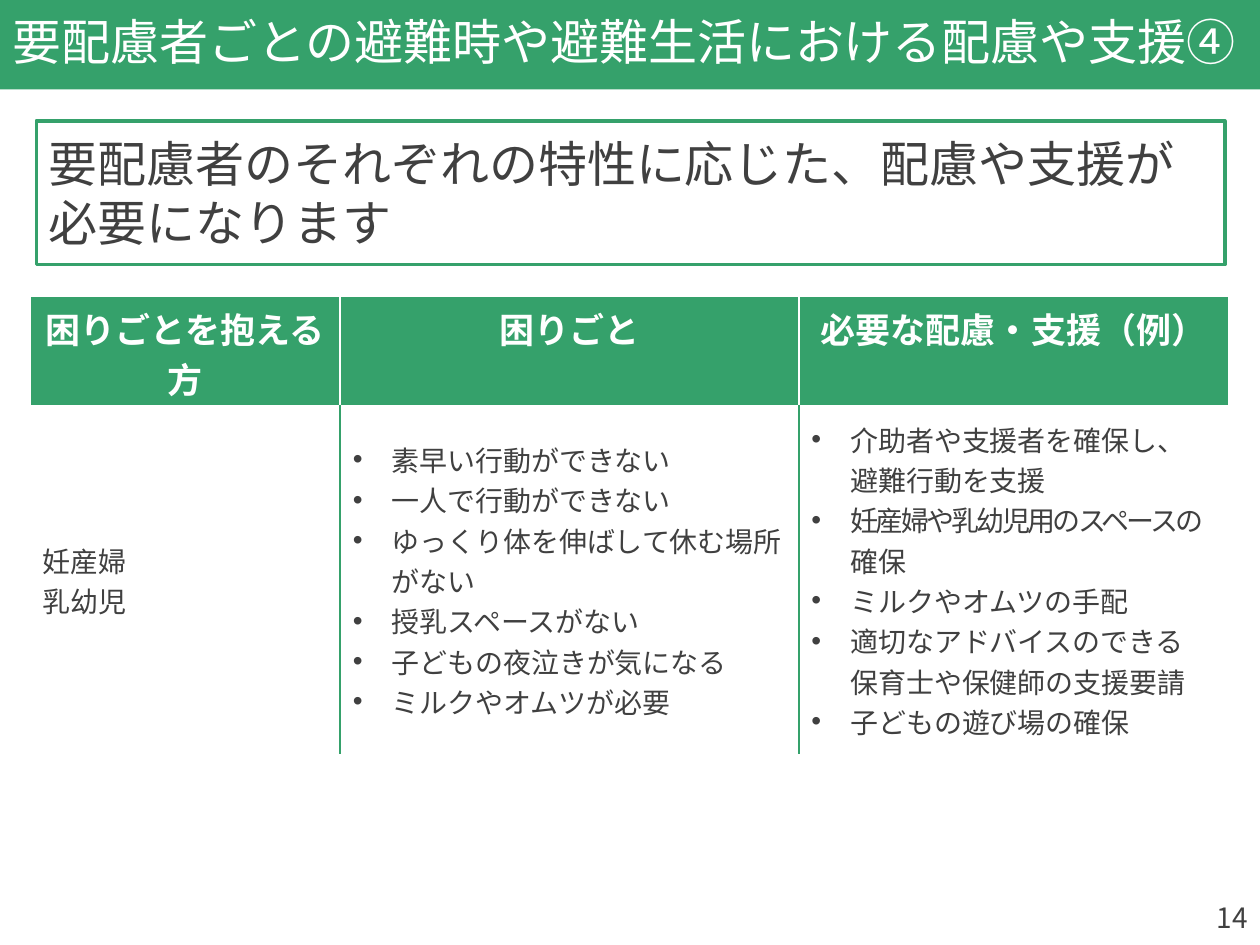
from dataclasses import dataclass

import lxml.etree
import pptx
import pptx.dml.color
import pptx.enum.shapes
import pptx.enum.text
import pptx.oxml.ns
import pptx.util
from pptx.util import Inches

qn = pptx.oxml.ns.qn
ALIGN = pptx.enum.text.PP_ALIGN
MIDDLE = pptx.enum.text.MSO_ANCHOR.MIDDLE


@dataclass(frozen=True)
class Theme:
    font: str = "Noto Sans CJK JP"
    green: str = "35A16B"
    text: str = "404040"
    white: str = "FFFFFF"
    headline_size: int = 28
    header_size: int = 20
    body_size: int = 16


@dataclass(frozen=True)
class Item:
    """One paragraph; tight_start is a leading part with condensed letters."""
    text: str
    tight_start: str = ""


@dataclass(frozen=True)
class Column:
    header: str
    width: float
    items: tuple[Item, ...]
    bulleted: bool = True


THEME = Theme()
COLUMNS = (
    Column("困りごとを抱える方", 2.46, (Item("妊産婦"), Item("乳幼児")), bulleted=False),
    Column("困りごと", 3.64, (
        Item("素早い行動ができない"),
        Item("一人で行動ができない"),
        Item("ゆっくり体を伸ばして休む場所がない"),
        Item("授乳スペースがない"),
        Item("子どもの夜泣きが気になる"),
        Item("ミルクやオムツが必要"),
    )),
    Column("必要な配慮・支援（例）", 3.41, (
        Item("介助者や支援者を確保し、\v避難行動を支援"),
        Item("確保", tight_start="妊産婦や乳幼児用のスペースの"),
        Item("ミルクやオムツの手配"),
        Item("適切なアドバイスのできる\v保育士や保健師の支援要請"),
        Item("子どもの遊び場の確保"),
    )),
)


def rgb(color: str) -> pptx.dml.color.RGBColor:
    return pptx.dml.color.RGBColor.from_string(color)


def format_runs(paragraph, size: int, color: str, bold: bool = False) -> None:
    """Format every run, naming the font for Japanese letters as well."""
    for run in paragraph.runs:
        run.font.size = pptx.util.Pt(size)
        run.font.bold = bold
        run.font.color.rgb = rgb(color)
        run.font.name = THEME.font
        latin = run.font._element.find(qn("a:latin"))
        east_asian = latin.makeelement(qn("a:ea"), {"typeface": THEME.font})
        latin.addnext(east_asian)


def fill_solid(part, color: str) -> None:
    part.fill.solid()
    part.fill.fore_color.rgb = rgb(color)


def add_bullet(paragraph) -> None:
    properties = paragraph._p.get_or_add_pPr()
    properties.set("marL", str(Inches(0.31)))
    properties.set("indent", str(-Inches(0.31)))
    lxml.etree.SubElement(properties, qn("a:buFont"), typeface="Arial")
    lxml.etree.SubElement(properties, qn("a:buChar"), char="•")


def set_borders(cell, left: str, right: str, bottom_width: int = 1) -> None:
    """Draw the cell borders; call before filling, as the fill comes after them."""
    properties = cell._tc.get_or_add_tcPr()
    borders = (("L", left, 1), ("R", right, 1),
               ("T", THEME.white, 1), ("B", THEME.white, bottom_width))
    for side, color, width in borders:
        line = lxml.etree.SubElement(properties, qn(f"a:ln{side}"),
                                     w=str(pptx.util.Pt(width)))
        solid = lxml.etree.SubElement(line, qn("a:solidFill"))
        lxml.etree.SubElement(solid, qn("a:srgbClr"), val=color)


def fill_header(cell, column: Column) -> None:
    set_borders(cell, THEME.white, THEME.white, bottom_width=3)
    fill_solid(cell, THEME.green)
    cell.text_frame.text = column.header
    paragraph = cell.text_frame.paragraphs[0]
    paragraph.alignment = ALIGN.CENTER
    format_runs(paragraph, THEME.header_size, THEME.white, bold=True)


def fill_body(cell, column: Column) -> None:
    set_borders(cell,
                left=THEME.white if column is COLUMNS[0] else THEME.green,
                right=THEME.white if column is COLUMNS[-1] else THEME.green)
    fill_solid(cell, THEME.white)
    cell.vertical_anchor = MIDDLE
    for index, item in enumerate(column.items):
        frame = cell.text_frame
        paragraph = frame.add_paragraph() if index else frame.paragraphs[0]
        if column.bulleted:
            add_bullet(paragraph)
        paragraph.text = item.tight_start or item.text
        if item.tight_start:
            paragraph.runs[0].font._element.set("spc", "-150")
            paragraph.add_run().text = item.text
        format_runs(paragraph, THEME.body_size, THEME.text)


def add_title(slide, text: str) -> None:
    title = slide.shapes.title
    title.left, title.top = Inches(0), Inches(0)
    title.width, title.height = Inches(10), Inches(0.71)
    fill_solid(title, THEME.green)
    frame = title.text_frame
    frame.text = text
    frame.word_wrap = True
    frame.auto_size = pptx.enum.text.MSO_AUTO_SIZE.NONE
    frame.vertical_anchor = MIDDLE
    paragraph = frame.paragraphs[0]
    paragraph.alignment = ALIGN.LEFT
    paragraph.line_spacing = 0.9
    format_runs(paragraph, THEME.headline_size, THEME.white)


def add_message(slide, text: str) -> None:
    message = slide.shapes.add_shape(
        pptx.enum.shapes.MSO_SHAPE.RECTANGLE,
        Inches(0.29), Inches(0.96), Inches(9.43), Inches(1.14))
    message.shadow.inherit = False
    fill_solid(message, THEME.white)
    message.line.color.rgb = rgb(THEME.green)
    message.line.width = pptx.util.Pt(2.25)
    frame = message.text_frame
    frame.word_wrap = True
    frame.vertical_anchor = MIDDLE
    paragraph = frame.paragraphs[0]
    paragraph.text = text
    paragraph.alignment = ALIGN.LEFT
    format_runs(paragraph, THEME.headline_size, THEME.text)


def add_support_table(slide) -> None:
    row_heights = (0.88, 2.75)
    table = slide.shapes.add_table(
        len(row_heights), len(COLUMNS), Inches(0.24), Inches(2.35),
        Inches(sum(column.width for column in COLUMNS)),
        Inches(sum(row_heights))).table
    for row, height in zip(table.rows, row_heights):
        row.height = Inches(height)
    for index, column in enumerate(COLUMNS):
        table.columns[index].width = Inches(column.width)
        fill_header(table.cell(0, index), column)
        fill_body(table.cell(1, index), column)


def add_page_number(slide, number: str) -> None:
    page = slide.shapes.add_textbox(
        Inches(7.75), Inches(7.1), Inches(2.25), Inches(0.4))
    page.text_frame.word_wrap = True
    page.text_frame.text = number
    paragraph = page.text_frame.paragraphs[0]
    paragraph.alignment = ALIGN.RIGHT
    format_runs(paragraph, THEME.body_size, THEME.text)


def main() -> None:
    presentation = pptx.Presentation()
    presentation.slide_width, presentation.slide_height = Inches(10), Inches(7.5)
    slide = presentation.slides.add_slide(presentation.slide_layouts[5])
    add_page_number(slide, "14")
    add_title(slide, "要配慮者ごとの避難時や避難生活における配慮や支援④")
    add_message(slide, "要配慮者のそれぞれの特性に応じた、配慮や支援が\v必要になります")
    add_support_table(slide)
    presentation.save("out.pptx")


if __name__ == "__main__":
    main()
